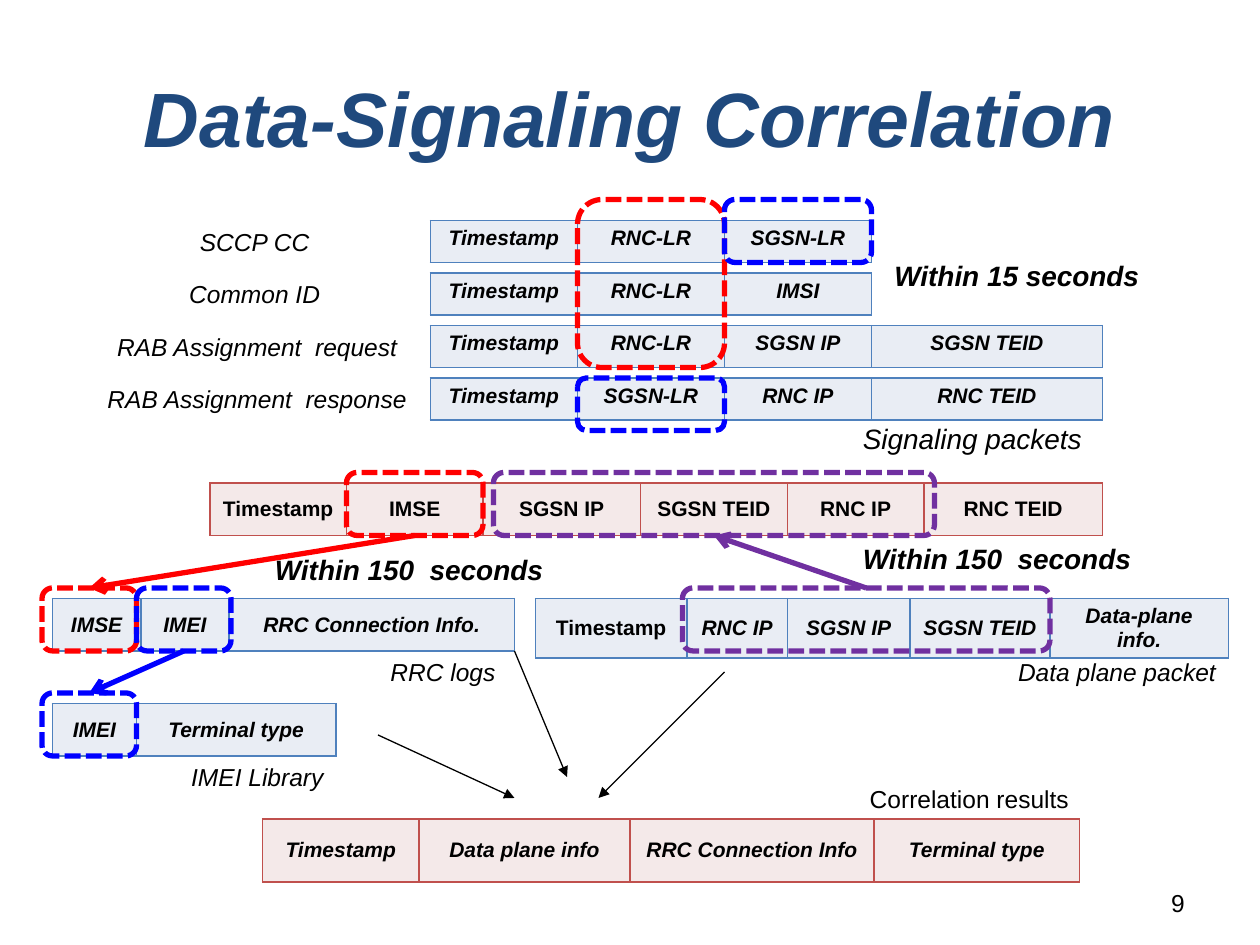
"""Build the Data-Signaling Correlation slide."""
from lxml import etree
from pptx import Presentation
from pptx.dml.color import RGBColor
from pptx.enum.dml import MSO_LINE
from pptx.enum.shapes import MSO_CONNECTOR, MSO_SHAPE
from pptx.enum.text import MSO_ANCHOR, MSO_AUTO_SIZE, PP_ALIGN
from pptx.oxml import parse_xml
from pptx.oxml.ns import nsdecls, qn
from pptx.util import Pt

LEFT, CENTER, RIGHT = PP_ALIGN.LEFT, PP_ALIGN.CENTER, PP_ALIGN.RIGHT
TOP, MIDDLE = MSO_ANCHOR.TOP, MSO_ANCHOR.MIDDLE
GROW = MSO_AUTO_SIZE.SHAPE_TO_FIT_TEXT
STRAIGHT = MSO_CONNECTOR.STRAIGHT
ROUNDED = MSO_SHAPE.ROUNDED_RECTANGLE
SHORT_DASH = MSO_LINE.SQUARE_DOT
TOP_SIDE, BOTTOM_SIDE = 0, 2

NAVY = RGBColor(0x1F, 0x49, 0x7D)
BLACK = RGBColor(0, 0, 0)
RED = RGBColor(0xFF, 0, 0)
BLUE = RGBColor(0, 0, 0xFF)
PURPLE = RGBColor(0x70, 0x30, 0xA0)
BLUE_BORDER = RGBColor(0x4F, 0x81, 0xBD)
BLUE_FILL = RGBColor(0xE9, 0xED, 0xF4)
RED_BORDER = RGBColor(0xC0, 0x50, 0x4D)
RED_FILL = RGBColor(0xF4, 0xE9, 0xE9)


def write_text(frame, text, size, align=CENTER, bold=False, italic=True, color=BLACK):
    paragraph = frame.paragraphs[0]
    paragraph.alignment = align
    run = paragraph.add_run()
    run.text = text
    run.font.color.rgb = color
    values = {"name": "Arial", "size": Pt(size), "bold": bold, "italic": italic}
    for name, value in values.items():
        setattr(run.font, name, value)


def add_arrow(slide, start, end, color, width, head):
    arrow = slide.shapes.add_connector(STRAIGHT, *map(Pt, start + end))
    arrow.line.color.rgb = color
    arrow.line.width = Pt(width)
    line = arrow.line._get_or_add_ln()
    etree.SubElement(line, qn("a:tailEnd"), type=head)
    etree.SubElement(arrow._element.spPr, qn("a:effectLst"))
    return arrow


presentation = Presentation()
presentation.slide_width, presentation.slide_height = Pt(720), Pt(540)
slide = presentation.slides.add_slide(presentation.slide_layouts[5])

title = slide.shapes.title
title.left, title.top, title.width, title.height = Pt(36), Pt(21.6), Pt(648), Pt(90)
title.text_frame.vertical_anchor = MIDDLE
write_text(title.text_frame, "Data-Signaling Correlation", 44, bold=True, color=NAVY)

signaling_packets = [
    ("SCCP CC", 207, ["Timestamp", "RNC-LR", "SGSN-LR"]),
    ("Common ID", 207, ["Timestamp", "RNC-LR", "IMSI"]),
    ("RAB Assignment  request", 210, ["Timestamp", "RNC-LR", "SGSN IP", "SGSN TEID"]),
    ("RAB Assignment  response", 210, ["Timestamp", "SGSN-LR", "RNC IP", "RNC TEID"]),
]
labels = []
tables = []
for index, (name, width, fields) in enumerate(signaling_packets):
    top = 126 + 30 * index
    labels.append((name, 42, top, width, 14, CENTER, False, True))
    columns = list(zip(fields, [84, 84, 84, 132]))
    tables.append((246, top, 24, BLUE_BORDER, BLUE_FILL, TOP, 0, columns))

tables += [
    (120, 276, 30, RED_BORDER, RED_FILL, MIDDLE, 6,
     [("Timestamp", 78), ("IMSE", 78), ("SGSN IP", 90),
      ("SGSN TEID", 84), ("RNC IP", 78), ("RNC TEID", 102)]),
    (30, 342, 30, BLUE_BORDER, BLUE_FILL, MIDDLE, 0,
     [("IMSE", 50.5), ("IMEI", 50.5), ("RRC Connection Info.", 163)]),
    (30, 402, 30, BLUE_BORDER, BLUE_FILL, MIDDLE, 0,
     [("IMEI", 48), ("Terminal type", 114)]),
    (306, 342, 30, BLUE_BORDER, BLUE_FILL, MIDDLE, 1,
     [("Timestamp", 86.5), ("RNC IP", 57.5), ("SGSN IP", 70),
      ("SGSN TEID", 80), ("Data-plane info.", 102)]),
    (150, 468, 36, RED_BORDER, RED_FILL, MIDDLE, 0,
     [("Timestamp", 89.5), ("Data plane info", 120.5),
      ("RRC Connection Info", 139.5), ("Terminal type", 117.5)]),
]
for left, top, height, border, fill, anchor, upright_count, columns in tables:
    total_width = sum(width for _, width in columns)
    table = slide.shapes.add_table(
        1, len(columns), Pt(left), Pt(top), Pt(total_width), Pt(height)).table
    table.first_row = table.horz_banding = False
    for index, (text, width) in enumerate(columns):
        table.columns[index].width = Pt(width)
        cell = table.cell(0, index)
        cell.vertical_anchor = anchor
        for side in "LRTB":
            cell._tc.get_or_add_tcPr().append(parse_xml(
                f'<a:ln{side} {nsdecls("a")} w="{Pt(1)}"><a:solidFill>'
                f'<a:srgbClr val="{border}"/></a:solidFill></a:ln{side}>'))
        cell.fill.solid()
        cell.fill.fore_color.rgb = fill
        write_text(cell.text_frame, text, 12, bold=True, italic=index >= upright_count)

labels += [
    ("RRC logs", 216, 372, 78, 14, LEFT, False, True),
    ("Data plane packet", 558, 372, 144, 14, RIGHT, False, True),
    ("IMEI Library", 102, 432, 90, 14, RIGHT, False, True),
    ("Signaling packets", 486, 237.6, 144, 16, LEFT, False, True),
    ("Correlation results", 474, 444.5, 144, 14, RIGHT, False, False),
    ("Within 15 seconds", 504, 144, 174, 16, LEFT, True, True),
    ("Within 150  seconds", 150, 312, 198, 16, LEFT, True, True),
    ("Within 150  seconds", 486, 306, 192, 16, LEFT, True, True),
    ("9", 516, 504, 168, 14, RIGHT, False, False),
]
for text, left, top, width, size, align, bold, italic in labels:
    box = slide.shapes.add_textbox(Pt(left), Pt(top), Pt(width), Pt(size * 1.2 + 7.2))
    box.text_frame.word_wrap = True
    box.text_frame.auto_size = GROW
    write_text(box.text_frame, text, size, align, bold, italic)

highlights = {
    "shared RNC-LR": (330, 114, 84, 96, RED),
    "response SGSN-LR": (330, 216, 84, 30, BLUE),
    "connection SGSN-LR": (414, 114, 84, 36, BLUE),
    "signaling IMSE": (198, 270, 78, 36, RED),
    "log IMSE": (24, 336, 54, 36, RED),
    "log IMEI": (78, 336, 54, 36, BLUE),
    "library IMEI": (24, 396, 54, 36, BLUE),
    "signaling tunnel": (282, 270, 252, 36, PURPLE),
    "data tunnel": (390, 336, 210, 36, PURPLE),
}
outlines = {}
for name, (left, top, width, height, color) in highlights.items():
    shape = slide.shapes.add_shape(ROUNDED, Pt(left), Pt(top), Pt(width), Pt(height))
    shape.shadow.inherit = False
    shape.fill.background()
    shape.line.color.rgb = color
    shape.line.width = Pt(3)
    shape.line.dash_style = SHORT_DASH
    outlines[name] = shape

matches = [
    ("signaling IMSE", BOTTOM_SIDE, "log IMSE", TOP_SIDE, RED),
    ("log IMEI", BOTTOM_SIDE, "library IMEI", TOP_SIDE, BLUE),
    ("data tunnel", TOP_SIDE, "signaling tunnel", BOTTOM_SIDE, PURPLE),
]
for source, source_side, target, target_side, color in matches:
    arrow = add_arrow(slide, (0, 0), (0, 0), color, 3, "arrow")
    arrow.begin_connect(outlines[source], source_side)
    arrow.end_connect(outlines[target], target_side)

for start, end in [((216, 420), (294, 456)), ((294, 372), (324, 444)),
                   ((414, 384), (342, 456))]:
    add_arrow(slide, start, end, BLACK, 0.75, "triangle")

presentation.save("out.pptx")
